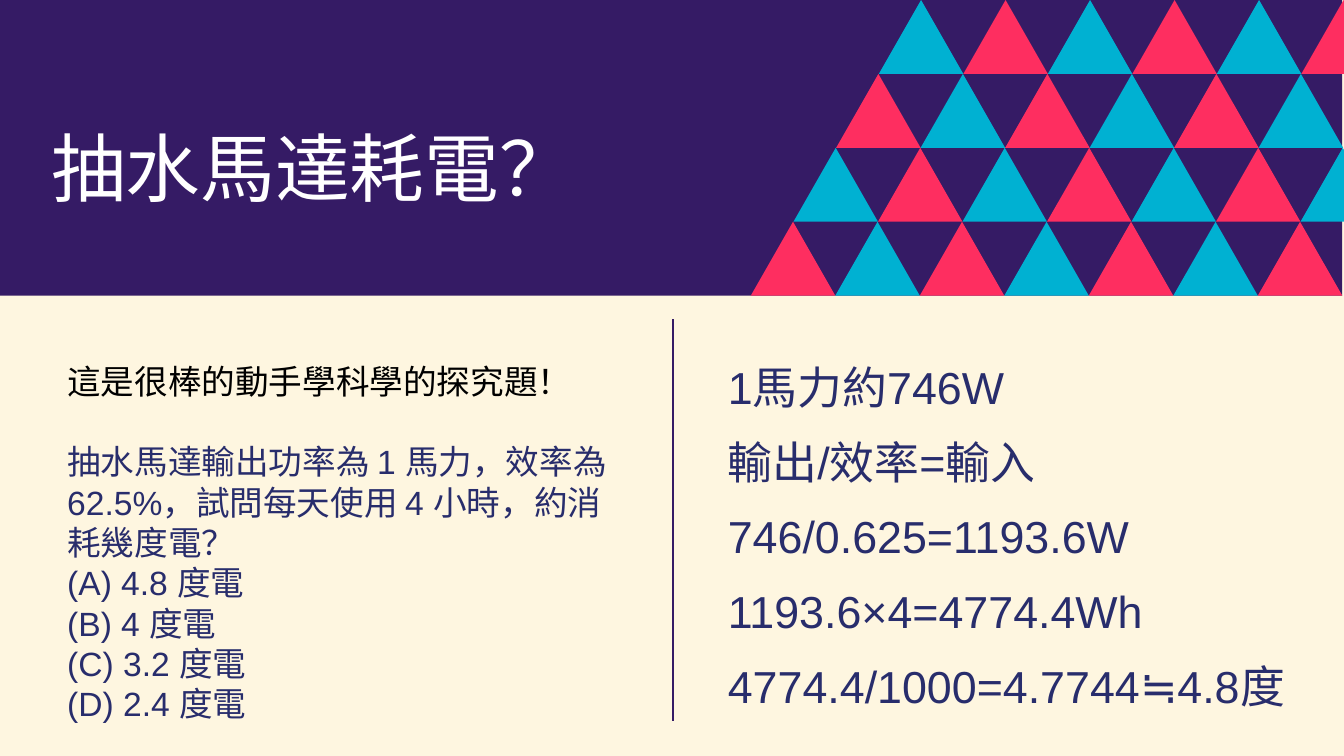
"""Build the slide on the power used by a water pump motor."""
from lxml.etree import SubElement
from pptx import Presentation
from pptx.dml.color import RGBColor
from pptx.enum.shapes import MSO_CONNECTOR as Conn, MSO_SHAPE as Kind
from pptx.enum.text import MSO_ANCHOR as Anchor, MSO_AUTO_SIZE as Auto, PP_ALIGN as Align
from pptx.oxml.ns import qn
from pptx.util import Pt

NAVY, PURPLE, PINK, TEAL = "282D6C", "351B65", "FE2E60", "00B1D2"


def paint(color, code):
    """Set a fill's, line's or font's colour from a hex string."""
    color.rgb = RGBColor.from_string(code)


def write(shape, box, lines, size, face, code):
    """Place a placeholder and fill it with plain left-aligned lines."""
    shape.left, shape.top, shape.width, shape.height = map(Pt, box)
    frame = shape.text_frame
    frame.text = "\n".join(lines)
    frame.word_wrap = True
    frame.auto_size = Auto.NONE
    frame.vertical_anchor = Anchor.TOP
    for para in frame.paragraphs:
        props = para._p.get_or_add_pPr()
        props.set("marL", "0")
        props.set("indent", "0")
        SubElement(props, qn("a:buNone"))
        para.alignment = Align.LEFT
        para.space_before = Pt(0)
        for run in para.runs:
            run.font.size = Pt(size)
            run.font.name = face
            paint(run.font.color, code)
    return frame


deck = Presentation()
deck.slide_width, deck.slide_height = Pt(1440), Pt(810)
slide = deck.slides.add_slide(deck.slide_layouts[3])
slide.background.fill.solid()
paint(slide.background.fill.fore_color, "FEF6E0")
shapes = slide.shapes
title, left, right = slide.placeholders

band = shapes.add_shape(Kind.RECTANGLE, Pt(-2), Pt(0), Pt(1440), Pt(316.8))
band.shadow.inherit = False
band.fill.solid()
paint(band.fill.fore_color, PURPLE)
band.line.fill.background()

group = shapes.add_group_shape()
wide, high = 90.54, 79.2
for row in range(4):
    for col in range(6 + row // 2):
        x = 941.6 - row * 45.72 + col * wide
        tri = group.shapes.add_shape(
            Kind.ISOSCELES_TRIANGLE, Pt(x), Pt(row * high), Pt(wide), Pt(high))
        tri.shadow.inherit = False
        tri.fill.solid()
        paint(tri.fill.fore_color, (TEAL, PINK)[(row + col) % 2])
        tri.line.fill.background()

rule = shapes.add_connector(Conn.STRAIGHT, Pt(720.7), Pt(342), Pt(720.7), Pt(772.5))
rule.line.width = Pt(2.25)
paint(rule.line.color, PURPLE)
SubElement(rule._element.spPr, qn("a:effectLst"))

frame = write(title, (54.7, 131, 823.7, 95.8), ["抽水馬達耗電？"],
              80, "Times New Roman", "FFFFFF")
frame.margin_left = frame.margin_right = frame.margin_top = frame.margin_bottom = 0
shapes._spTree.append(title._element)

frame = write(left, (64.8, 383, 609.8, 365.8), [
    "這是很棒的動手學科學的探究題！",
    "抽水馬達輸出功率為 1 馬力，效率為 62.5%，試問每天使用 4 小時，約消耗幾度電？",
    "(A) 4.8 度電",
    "(B) 4 度電",
    "(C) 3.2 度電",
    "(D) 2.4 度電",
], 36, "Arial", NAVY)
head, ask = frame.paragraphs[:2]
paint(head.runs[0].font.color, "000000")
ask.space_before = Pt(43)

frame = write(right, (772.6, 359.3, 635, 432.7), [
    "1馬力約746W",
    "輸出/效率=輸入",
    "746/0.625=1193.6W",
    "1193.6×4=4774.4Wh",
    "4774.4/1000=4.7744≒4.8度",
], 48, "Arial", NAVY)
for para in frame.paragraphs:
    para.line_spacing = Pt(80)

deck.save("out.pptx")
